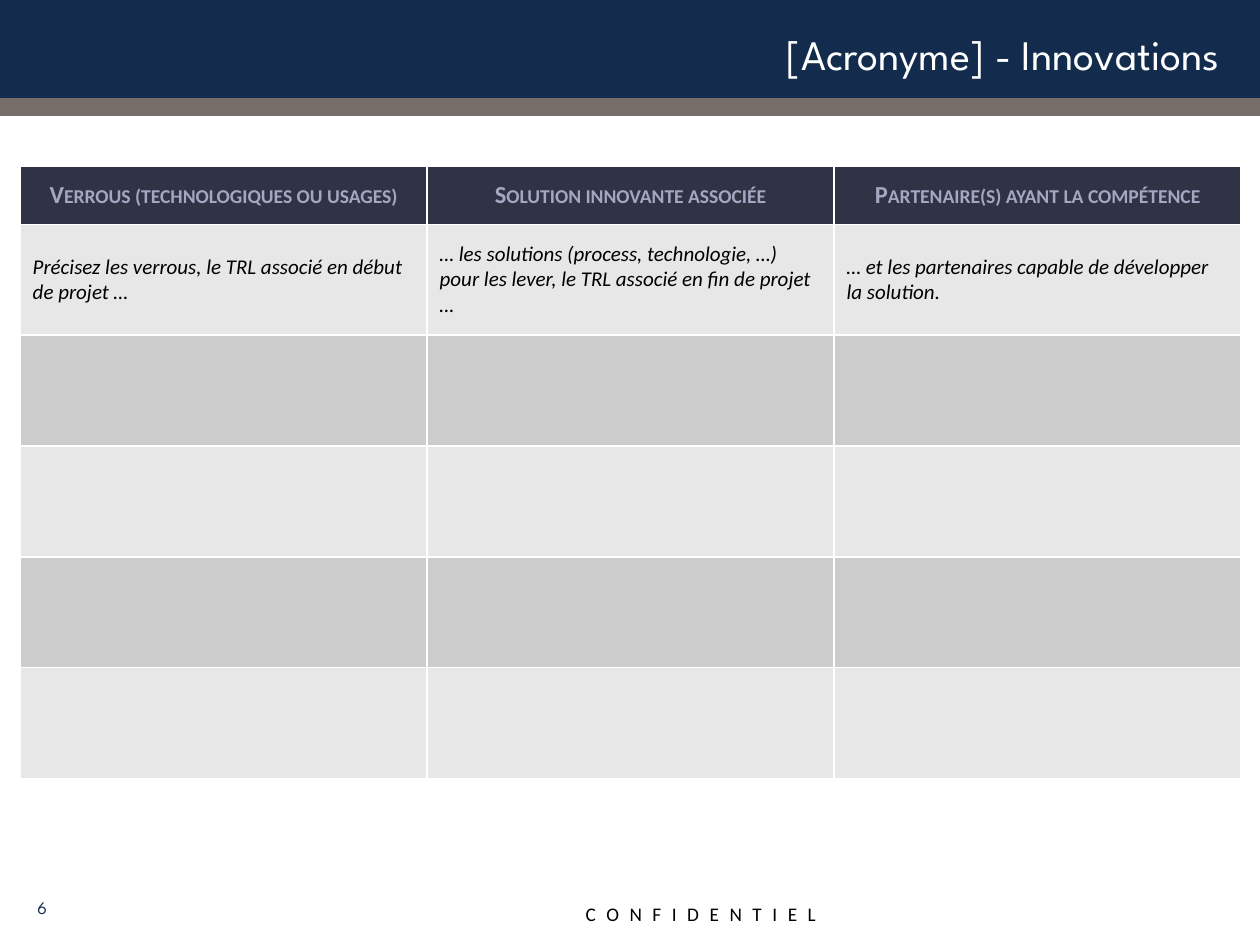
"""Build the innovations slide: a banner, a three-column table and a footer."""
from dataclasses import dataclass

from lxml.etree import SubElement
from pptx import Presentation
from pptx.dml.color import RGBColor
from pptx.enum.shapes import MSO_SHAPE
from pptx.enum.text import MSO_ANCHOR, PP_ALIGN
from pptx.oxml.ns import qn
from pptx.util import Inches, Pt


@dataclass(frozen=True)
class Theme:
    navy: str = "132C4D"
    taupe: str = "766C68"
    white: str = "FFFFFF"
    black: str = "000000"
    header_fill: str = "303346"
    header_text: str = "A3A7C0"
    bands: tuple = ("E7E7E7", "CCCCCC")
    title_font: str = "League Spartan"
    body_font: str = "Calibri"
    title_size: int = 24
    header_size: int = 14
    body_size: int = 12
    footer_size: int = 11
    number_size: int = 10


THEME = Theme()
TITLE = "[Acronyme] - Innovations"
FOOTER = "CONFIDENTIEL"
PAGE_NUMBER = "6"
HEADERS = [
    "Verrous (technologiques ou usages)",
    "Solution innovante associée",
    "Partenaire(s) ayant la compétence",
]
GUIDANCE = [
    "Précisez les verrous, le TRL associé en début de projet …",
    "… les solutions (process, technologie, …) pour les lever, le TRL associé en fin de projet …",
    "… et les partenaires capable de développer la solution.",
]
EMPTY_ROWS = 4
ROWS = [HEADERS, GUIDANCE] + [[""] * len(HEADERS)] * EMPTY_ROWS

SLIDE_SIZE = (10, 7.5)
BANDS = [((0, 0, 10, 0.9), THEME.navy), ((0, 0.78, 10, 0.14), THEME.taupe)]
TITLE_BOX = (0.15, 0.14, 9.63, 0.58)
FOOTER_BOX = (4.55, 7.11, 2.13, 0.29)
NUMBER_BOX = (-0.04, 7, 0.51, 0.4)
TABLE_BOX = (0.16, 1.32, 9.69, 4.86)
HEADER_HEIGHT = 0.46


def inches(box):
    return [Inches(length) for length in box]


def write(text_frame, text, font_name, size, color, align=PP_ALIGN.LEFT, bold=False, italic=False):
    paragraph = text_frame.paragraphs[0]
    paragraph.text = text
    paragraph.alignment = align
    font = paragraph.font
    font.name, font.size, font.bold, font.italic = font_name, Pt(size), bold, italic
    font.color.rgb = RGBColor.from_string(color)
    return paragraph


def set_run_property(paragraph, name, value):
    for run in paragraph.runs:
        run.font._element.set(name, value) if hasattr(run.font, "_element") else run._r.get_or_add_rPr().set(name, value)


def add_band(slide, box, color):
    band = slide.shapes.add_shape(MSO_SHAPE.RECTANGLE, *inches(box))
    band.shadow.inherit = False
    band.fill.solid()
    band.fill.fore_color.rgb = RGBColor.from_string(color)
    band.line.fill.background()


def add_title(slide):
    title = slide.shapes.title
    title.left, title.top, title.width, title.height = inches(TITLE_BOX)
    title.text_frame.vertical_anchor = MSO_ANCHOR.MIDDLE
    write(title.text_frame, TITLE, THEME.title_font, THEME.title_size, THEME.white, PP_ALIGN.RIGHT)
    slide.shapes._spTree.append(title._element)


def add_label(slide, box, wrap, anchor, *style):
    text_frame = slide.shapes.add_textbox(*inches(box)).text_frame
    text_frame.word_wrap = wrap
    text_frame.vertical_anchor = anchor
    return write(text_frame, *style)


def style_cell(cell, fill):
    cell.vertical_anchor = MSO_ANCHOR.MIDDLE
    properties = cell._tc.get_or_add_tcPr()
    for side in ("lnL", "lnR", "lnT", "lnB"):
        border = SubElement(properties, qn(f"a:{side}"), w=str(Pt(1)))
        SubElement(SubElement(border, qn("a:solidFill")), qn("a:srgbClr"), val=THEME.white)
    cell.fill.solid()
    cell.fill.fore_color.rgb = RGBColor.from_string(fill)


def add_table(slide):
    table = slide.shapes.add_table(len(ROWS), len(HEADERS), *inches(TABLE_BOX)).table
    width, height = TABLE_BOX[2:]
    body_height = (height - HEADER_HEIGHT) / (len(ROWS) - 1)
    for column in table.columns:
        column.width = Inches(width / len(HEADERS))
    for row_index, texts in enumerate(ROWS):
        is_header = row_index == 0
        table.rows[row_index].height = Inches(HEADER_HEIGHT if is_header else body_height)
        fill = THEME.header_fill if is_header else THEME.bands[(row_index - 1) % 2]
        for column_index, text in enumerate(texts):
            cell = table.cell(row_index, column_index)
            style_cell(cell, fill)
            if is_header:
                paragraph = write(cell.text_frame, text, THEME.body_font, THEME.header_size,
                                  THEME.header_text, PP_ALIGN.CENTER, bold=True)
                set_run_property(paragraph, "cap", "small")
            elif text:
                write(cell.text_frame, text, THEME.body_font, THEME.body_size, THEME.black, italic=True)


def main():
    presentation = Presentation()
    presentation.slide_width, presentation.slide_height = inches(SLIDE_SIZE)
    slide = presentation.slides.add_slide(presentation.slide_layouts[5])
    for box, color in BANDS:
        add_band(slide, box, color)
    footer = add_label(slide, FOOTER_BOX, False, MSO_ANCHOR.TOP,
                       FOOTER, THEME.body_font, THEME.footer_size, THEME.black)
    set_run_property(footer, "spc", "600")
    add_title(slide)
    add_label(slide, NUMBER_BOX, True, MSO_ANCHOR.MIDDLE, PAGE_NUMBER,
              THEME.title_font, THEME.number_size, THEME.navy, PP_ALIGN.RIGHT)
    add_table(slide)
    presentation.save("out.pptx")


if __name__ == "__main__":
    main()
